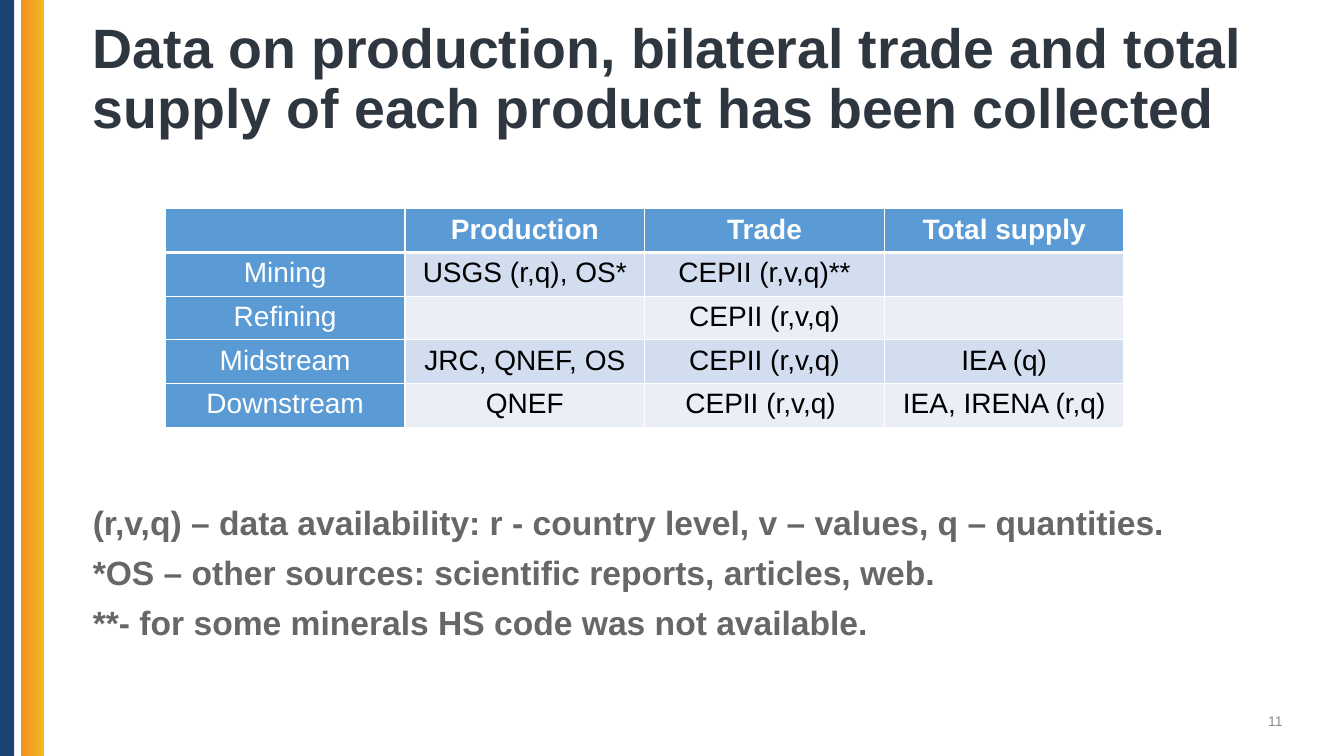
import pptx
import pptx.dml.color
import pptx.enum.shapes
import pptx.enum.text
import pptx.oxml
import pptx.oxml.ns
import pptx.util
from pptx.util import Inches

ALIGN = pptx.enum.text.PP_ALIGN
MIDDLE = pptx.enum.text.MSO_ANCHOR.MIDDLE
ACCENT = "5B9BD5"
BANDS = ["EAEFF7", "D2DEEF"]
TITLE = "Data on production, bilateral trade and total supply of each product has been collected"
SOURCES = [
    ["", "Production", "Trade", "Total supply"],
    ["Mining", "USGS (r,q), OS*", "CEPII (r,v,q)**", ""],
    ["Refining", "", "CEPII (r,v,q)", ""],
    ["Midstream", "JRC, QNEF, OS", "CEPII (r,v,q)", "IEA (q)"],
    ["Downstream", "QNEF", "CEPII (r,v,q) ", "IEA, IRENA (r,q)"],
]
NOTES = [
    "(r,v,q) – data availability: r - country level, v – values, q – quantities.",
    "*OS – other sources: scientific reports, articles, web.",
    "**- for some minerals HS code was not available.",
]


def rgb(value):
    return pptx.dml.color.RGBColor.from_string(value)


def style(paragraph, size, color, bold=False, align=ALIGN.LEFT):
    paragraph.alignment = align
    font = paragraph.font
    font.name = "Arial"
    font.size = pptx.util.Pt(size)
    font.bold = bold
    font.color.rgb = rgb(color)


def place(shape, left, top, width, height):
    shape.left, shape.top = Inches(left), Inches(top)
    shape.width, shape.height = Inches(width), Inches(height)


def add_bar(slide, left, width, colors):
    bar = slide.shapes.add_shape(
        pptx.enum.shapes.MSO_SHAPE.RECTANGLE, Inches(left), 0, Inches(width), Inches(7.5))
    bar.shadow.inherit = False
    bar.line.fill.background()
    if len(colors) == 1:
        bar.fill.solid()
        bar.fill.fore_color.rgb = rgb(colors[0])
        return
    bar.fill.gradient()
    bar.fill.gradient_angle = 0
    for stop, color in zip(bar.fill.gradient_stops, colors):
        stop.color.rgb = rgb(color)


def fill_title(title):
    place(title, 0.82, 0.4, 12, 0.8)
    frame = title.text_frame
    frame.text = TITLE
    frame.auto_size = pptx.enum.text.MSO_AUTO_SIZE.NONE
    frame.vertical_anchor = MIDDLE
    frame.paragraphs[0].line_spacing = 0.9
    style(frame.paragraphs[0], 39.6, "2E3640", bold=True)


def fill_notes(body):
    place(body, 0.82, 4.97, 11.29, 1.79)
    frame = body.text_frame
    frame.text = "\n".join(NOTES)
    frame.auto_size = pptx.enum.text.MSO_AUTO_SIZE.NONE
    for index, note in enumerate(frame.paragraphs):
        properties = note._p.get_or_add_pPr()
        properties.set("marL", "0")
        properties.set("indent", "0")
        pptx.oxml.ns.qn("a:buNone")
        properties.append(pptx.oxml.parse_xml(
            f'<a:buNone {pptx.oxml.ns.nsdecls("a")}/>'))
        note.line_spacing = 0.9
        note.space_before = pptx.util.Pt(10 if index else 0)
        style(note, 24, "666767", bold=True)


def add_borders(cell, top, bottom):
    properties = cell._tc.get_or_add_tcPr()
    for side, width in (("L", 1), ("R", 1), ("T", top), ("B", bottom)):
        properties.append(pptx.oxml.parse_xml(
            f'<a:ln{side} {pptx.oxml.ns.nsdecls("a")} w="{pptx.util.Pt(width)}">'
            f'<a:solidFill><a:srgbClr val="FFFFFF"/></a:solidFill></a:ln{side}>'))


def add_sources_table(slide):
    table = slide.shapes.add_table(
        len(SOURCES), len(SOURCES[0]), Inches(1.64), Inches(2.07),
        Inches(9.51), Inches(2.05)).table
    for row, texts in enumerate(SOURCES):
        for column, text in enumerate(texts):
            cell = table.cell(row, column)
            heading = row == 0 or column == 0
            add_borders(cell, 3 if row == 1 else 1, 3 if row == 0 else 1)
            cell.fill.solid()
            cell.fill.fore_color.rgb = rgb(ACCENT if heading else BANDS[row % 2])
            cell.text = text
            style(cell.text_frame.paragraphs[0], 20,
                  "FFFFFF" if heading else "000000", row == 0, ALIGN.CENTER)


def add_slide_number(slide):
    frame = slide.shapes.add_textbox(
        Inches(9.82), Inches(6.95), Inches(3), Inches(0.4)).text_frame
    frame.word_wrap = True
    frame.vertical_anchor = MIDDLE
    frame.text = "11"
    style(frame.paragraphs[0], 10, "8C8C8C", align=ALIGN.RIGHT)


def main():
    presentation = pptx.Presentation()
    presentation.slide_width, presentation.slide_height = Inches(13.33), Inches(7.5)
    slide = presentation.slides.add_slide(presentation.slide_layouts[1])
    add_bar(slide, -0.03, 0.17, ["1B4273"])
    add_bar(slide, 0.21, 0.23, ["F38F22", "F1BA20"])
    fill_title(slide.shapes.title)
    fill_notes(slide.placeholders[1])
    add_slide_number(slide)
    add_sources_table(slide)
    presentation.save("out.pptx")


if __name__ == "__main__":
    main()
